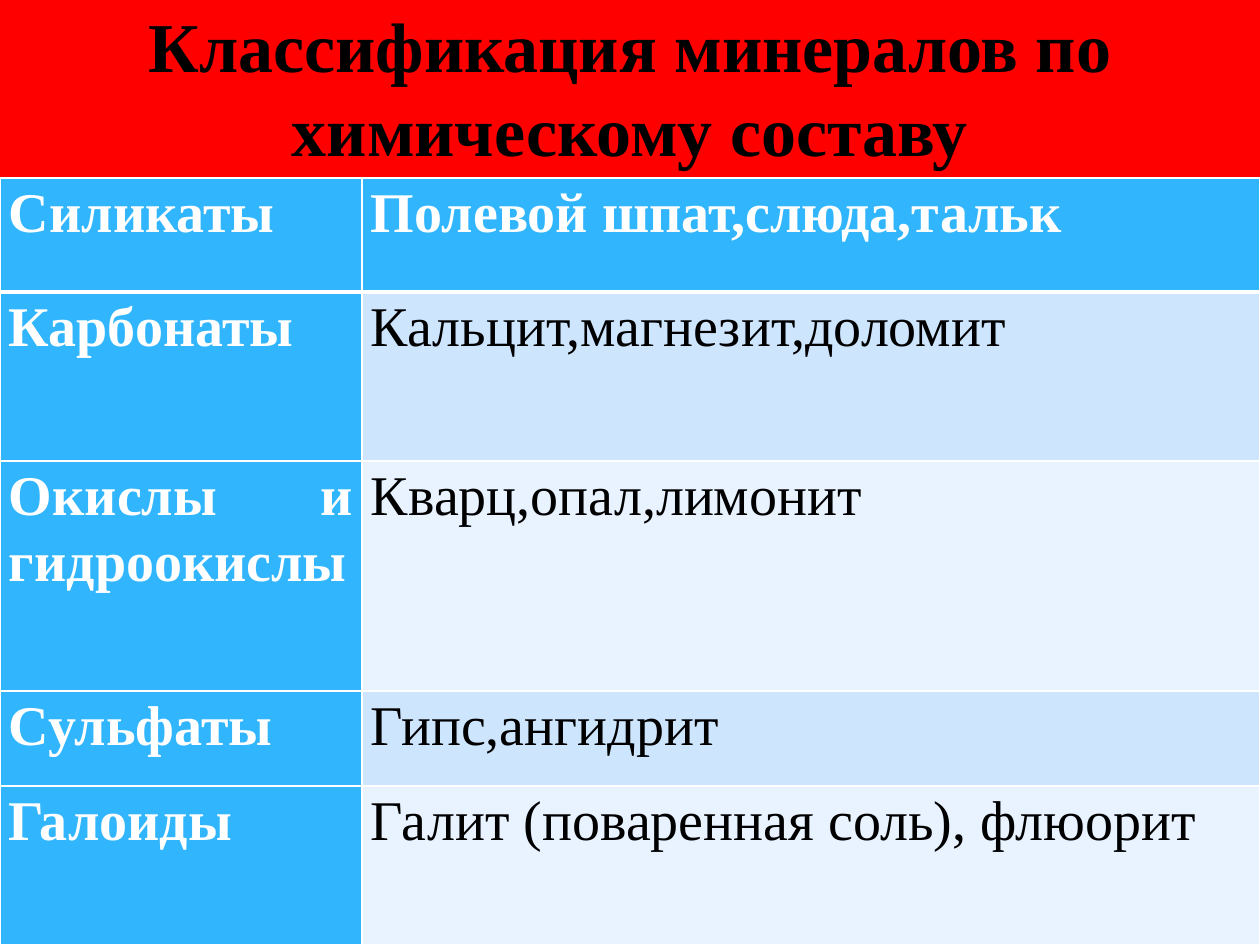
from pptx import Presentation
from pptx.dml.color import RGBColor
from pptx.enum.text import MSO_ANCHOR as Anchor, PP_ALIGN as Align
from pptx.oxml import parse_xml
from pptx.oxml.ns import nsdecls
from pptx.util import Emu, Pt

PX = 914400 / 126
WIDTH, HEIGHT = 1260, 945
FONT = "Times New Roman"
BLACK = RGBColor(0x00, 0x00, 0x00)
WHITE = RGBColor(0xFF, 0xFF, 0xFF)
RED = RGBColor(0xFF, 0x00, 0x00)
BLUE = RGBColor(0x31, 0xB6, 0xFD)
BANDS = (RGBColor(0xE8, 0xF3, 0xFF), RGBColor(0xCE, 0xE5, 0xFE))

TITLE = "Классификация минералов по химическому составу"
TABLE_TOP = 178
COLUMN_WIDTHS = (362, 898)
MINERALS = (
    (114, "Силикаты", "Полевой шпат,слюда,тальк"),
    (169, "Карбонаты", "Кальцит,магнезит,доломит"),
    (230, "Окислы и гидроокислы", "Кварц,опал,лимонит"),
    (95, "Сульфаты ", "Гипс,ангидрит"),
    (159, "Галоиды", "Галит (поваренная соль), флюорит"),
)


def px(length):
    return Emu(round(length * PX))


def set_font(paragraph, size, color, bold):
    for run in paragraph.runs:
        run.font.name = FONT
        run.font.size = Pt(size)
        run.font.bold = bold
        run.font.color.rgb = color


def set_borders(cell, bottom_width):
    properties = cell._tc.get_or_add_tcPr()
    widths = {"lnL": 1, "lnR": 1, "lnT": 1, "lnB": bottom_width}
    for position, (side, width) in enumerate(widths.items()):
        properties.insert(position, parse_xml(
            f'<a:{side} {nsdecls("a")} w="{Pt(width)}"><a:solidFill>'
            f'<a:srgbClr val="{WHITE}"/></a:solidFill></a:{side}>'))


def add_title(slide):
    title = slide.shapes.title
    title.left, title.top, title.width, title.height = map(px, (0, -5, WIDTH, 183))
    title.fill.solid()
    title.fill.fore_color.rgb = RED
    frame = title.text_frame
    frame.text = TITLE
    frame.word_wrap = True
    frame.vertical_anchor = Anchor.MIDDLE
    paragraph = frame.paragraphs[0]
    paragraph.alignment = Align.CENTER
    set_font(paragraph, 40, BLACK, True)


def format_cell(cell, text, fill, color, bold, bottom_width):
    cell.margin_left = cell.margin_right = px(9)
    cell.margin_top = cell.margin_bottom = 0
    cell.fill.solid()
    cell.fill.fore_color.rgb = fill
    set_borders(cell, bottom_width)
    cell.text_frame.text = text
    paragraph = cell.text_frame.paragraphs[0]
    paragraph.alignment = Align.JUSTIFY
    paragraph.line_spacing = 1.07
    set_font(paragraph, 32, color, bold)


def add_mineral_table(slide):
    table = slide.shapes.add_table(
        len(MINERALS), len(COLUMN_WIDTHS),
        0, px(TABLE_TOP), px(WIDTH), px(HEIGHT - TABLE_TOP)).table
    table.first_col = True
    for column, width in zip(table.columns, COLUMN_WIDTHS):
        column.width = px(width)
    for row_index, (height, *texts) in enumerate(MINERALS):
        table.rows[row_index].height = px(height)
        for column_index, text in enumerate(texts):
            heading = row_index == 0 or column_index == 0
            format_cell(
                table.cell(row_index, column_index), text,
                BLUE if heading else BANDS[row_index % 2],
                WHITE if heading else BLACK,
                heading, 3 if row_index == 0 else 1)


def main():
    presentation = Presentation()
    presentation.slide_width = px(WIDTH)
    presentation.slide_height = px(HEIGHT)
    slide = presentation.slides.add_slide(presentation.slide_layouts[5])
    add_title(slide)
    add_mineral_table(slide)
    presentation.save("out.pptx")


if __name__ == "__main__":
    main()
